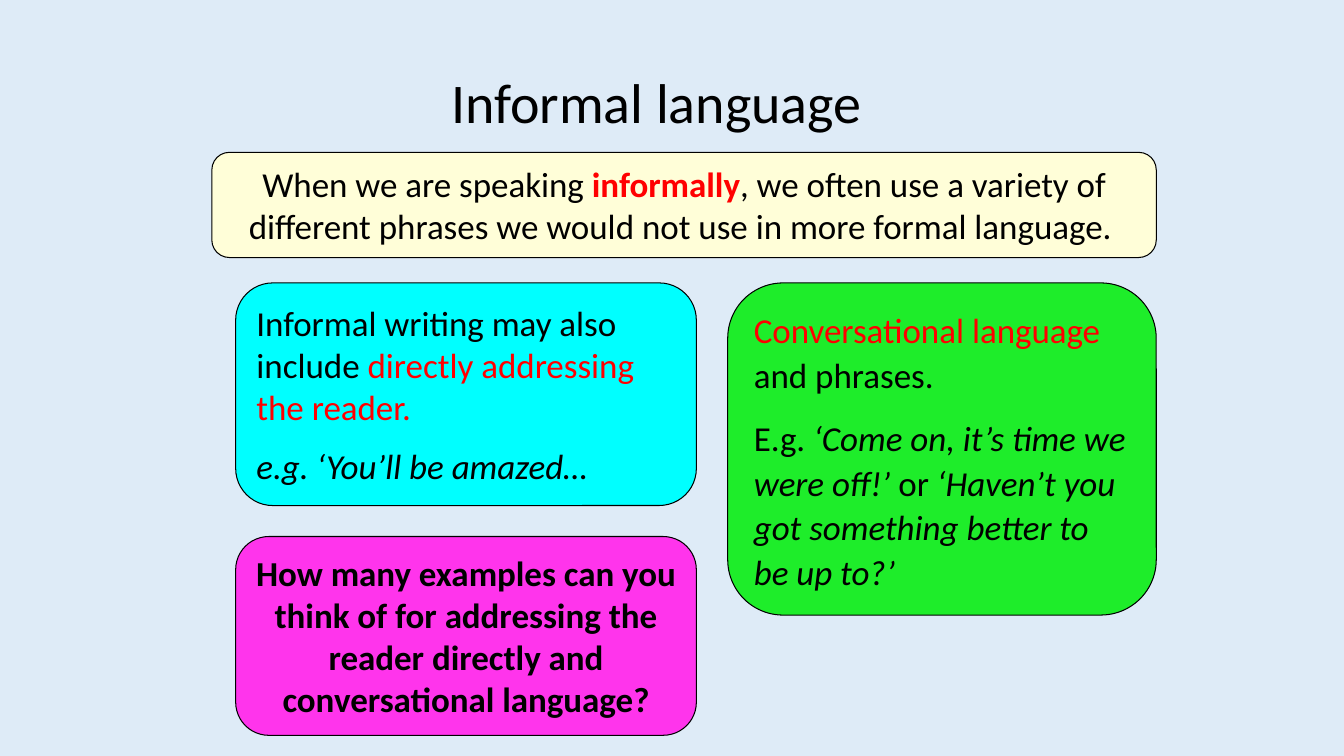
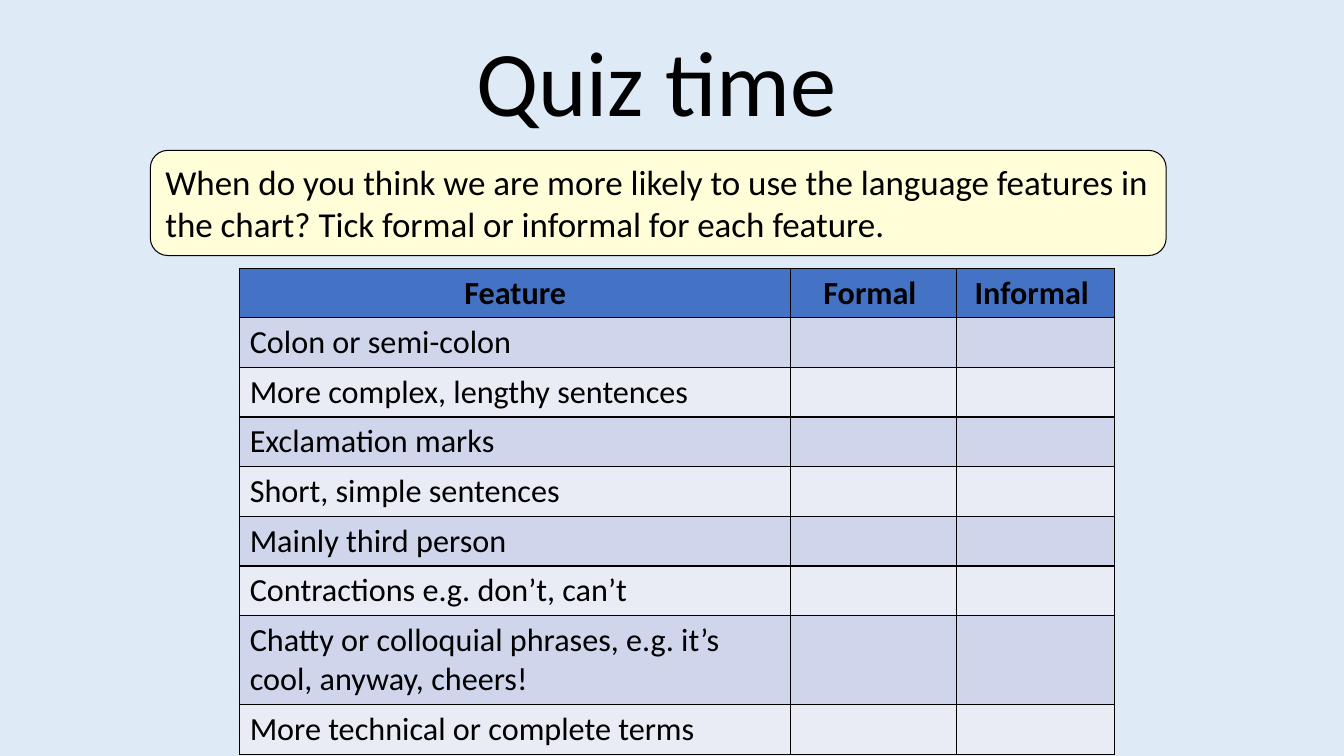
from dataclasses import dataclass
from typing import NamedTuple

from lxml import etree
from pptx import Presentation
from pptx.dml.color import RGBColor
from pptx.enum import shapes, text
from pptx.oxml import ns
from pptx.util import Cm, Pt


@dataclass(frozen=True)
class Theme:
    font: str = "Calibri"
    body_size: int = 25
    table_size: int = 23
    background: str = "DEEBF7"
    ink: str = "000000"
    accent: str = "FF0000"
    intro: str = "FFFED8"
    cyan: str = "00FFFF"
    green: str = "1EED2A"
    pink: str = "FF34EC"
    table_header: str = "4472C4"
    bands: tuple[str, str] = ("CFD5EA", "E9EBF5")
    line_width: float = 0.75
    border_width: float = 1


THEME = Theme()
CENTER, LEFT = text.PP_ALIGN.CENTER, text.PP_ALIGN.LEFT


class Run(NamedTuple):
    text: str
    color: str = THEME.ink
    bold: bool = False
    italic: bool = False


class Box(NamedTuple):
    """Rounded panel, lengths in centimetres."""
    left: float
    top: float
    width: float
    height: float
    fill: str
    paragraphs: list[list[Run]]
    align: text.PP_ALIGN = LEFT
    line_spacing: float = 1.0
    gap_before: float = 12.5
    space_after: float = 0


INFORMAL_BOXES = [
    Box(5.34, 3.84, 23.8, 2.65, THEME.intro, [[
        Run("When we are speaking "),
        Run("informally", THEME.accent, bold=True),
        Run(", we often use a variety of different phrases we would not use "
            "in more formal language. "),
    ]], CENTER),
    Box(5.94, 7.13, 11.61, 5.61, THEME.cyan, [
        [Run("Informal writing may also include "),
         Run("directly addressing the reader.", THEME.accent)],
        [Run("e.g. ‘You’ll be amazed…", italic=True)],
    ]),
    Box(18.34, 7.13, 10.8, 8.37, THEME.green, [
        [Run("Conversational language ", THEME.accent), Run("and phrases.")],
        [Run("E.g. "),
         Run("‘Come on, it’s time we were off!’", italic=True),
         Run(" or "),
         Run("‘Haven’t you got something better to be up to?’", italic=True)],
    ], line_spacing=1.07, gap_before=5, space_after=8),
    Box(5.94, 13.52, 11.61, 5.01, THEME.pink, [[
        Run("How many examples can you think of for addressing the reader "
            "directly and conversational language?", bold=True),
    ]], CENTER),
]

QUIZ_BOX = Box(3.79, 3.79, 25.6, 2.65, THEME.intro, [[
    Run("When do you think we are more likely to use the language features in "
        "the chart? Tick formal or informal for each feature."),
]])

HEADINGS = ["Feature", "Formal ", "Informal "]
FEATURES = [
    "Colon or semi-colon",
    "More complex, lengthy sentences",
    "Exclamation marks",
    "Short, simple sentences",
    "Mainly third person",
    "Contractions e.g. don’t, can’t",
    "Chatty or colloquial phrases, e.g. it’s cool, anyway, cheers!",
    "More technical or complete terms",
]
COLUMN_WIDTHS = [13.89, 4.17, 3.99]
ROW_HEIGHT, TALL_ROW_HEIGHT = 1.23, 2.2
ONE_LINE_CHARS = 40


def rgb(color: str) -> RGBColor:
    return RGBColor.from_string(color)


def add_run(p, run: Run, size: float) -> None:
    r = p.add_run()
    r.text = run.text
    r.font.name = THEME.font
    r.font.size = Pt(size)
    r.font.bold = run.bold
    r.font.italic = run.italic
    r.font.color.rgb = rgb(run.color)


def add_titled_slide(prs, title: str, size: float):
    s = prs.slides.add_slide(prs.slide_layouts.get_by_name("Title Only"))
    sp = s.shapes.title
    sp.left, sp.top, sp.width, sp.height = Cm(7.54), Cm(-0.64), Cm(18), Cm(4.17)
    tf = sp.text_frame
    tf.vertical_anchor = text.MSO_ANCHOR.BOTTOM
    tf.word_wrap = True
    p = tf.paragraphs[0]
    p.alignment = CENTER
    add_run(p, Run(title), size)
    return s


def add_box(s, box: Box) -> None:
    sp = s.shapes.add_shape(
        shapes.MSO_SHAPE.ROUNDED_RECTANGLE,
        Cm(box.left), Cm(box.top), Cm(box.width), Cm(box.height))
    sp.shadow.inherit = False
    sp.fill.solid()
    sp.fill.fore_color.rgb = rgb(box.fill)
    sp.line.color.rgb = rgb(THEME.ink)
    sp.line.width = Pt(THEME.line_width)
    tf = sp.text_frame
    tf.word_wrap = True
    tf.vertical_anchor = text.MSO_ANCHOR.MIDDLE
    for i, runs in enumerate(box.paragraphs):
        p = tf.add_paragraph() if i else tf.paragraphs[0]
        p.alignment = box.align
        p.line_spacing = box.line_spacing
        p.space_before = Pt(box.gap_before if i else 0)
        p.space_after = Pt(box.space_after)
        for run in runs:
            add_run(p, run, THEME.body_size)


def set_borders(cell) -> None:
    """Draw all four cell borders; they must precede the fill in the XML."""
    props = cell._tc.get_or_add_tcPr()
    for i, side in enumerate(("lnL", "lnR", "lnT", "lnB")):
        ln = etree.Element(ns.qn(f"a:{side}"), w=str(Pt(THEME.border_width)))
        fill = etree.SubElement(ln, ns.qn("a:solidFill"))
        etree.SubElement(fill, ns.qn("a:srgbClr"), val=THEME.ink)
        props.insert(i, ln)


def add_feature_table(s) -> None:
    rows = [HEADINGS] + [[feature, "", ""] for feature in FEATURES]
    heights = [TALL_ROW_HEIGHT if len(row[0]) > ONE_LINE_CHARS else ROW_HEIGHT
               for row in rows]
    table = s.shapes.add_table(
        len(rows), len(HEADINGS), Cm(6.04), Cm(6.76),
        Cm(sum(COLUMN_WIDTHS)), Cm(sum(heights))).table
    for column, width in zip(table.columns, COLUMN_WIDTHS):
        column.width = Cm(width)
    for i, (row, height) in enumerate(zip(rows, heights)):
        table.rows[i].height = Cm(height)
        is_header = i == 0
        color = THEME.table_header if is_header else THEME.bands[(i - 1) % 2]
        for j, value in enumerate(row):
            cell = table.cell(i, j)
            cell.fill.solid()
            cell.fill.fore_color.rgb = rgb(color)
            set_borders(cell)
            if value:
                p = cell.text_frame.paragraphs[0]
                p.alignment = CENTER if is_header else LEFT
                add_run(p, Run(value, bold=is_header), THEME.table_size)


def main() -> None:
    prs = Presentation()
    prs.slide_width, prs.slide_height = Cm(33.87), Cm(19.05)
    background = prs.slide_master.background.fill
    background.solid()
    background.fore_color.rgb = rgb(THEME.background)

    s = add_titled_slide(prs, "Informal language", 40)
    for box in INFORMAL_BOXES:
        add_box(s, box)

    s = add_titled_slide(prs, "Quiz time", 66)
    add_box(s, QUIZ_BOX)
    add_feature_table(s)

    prs.save("out.pptx")


if __name__ == "__main__":
    main()
